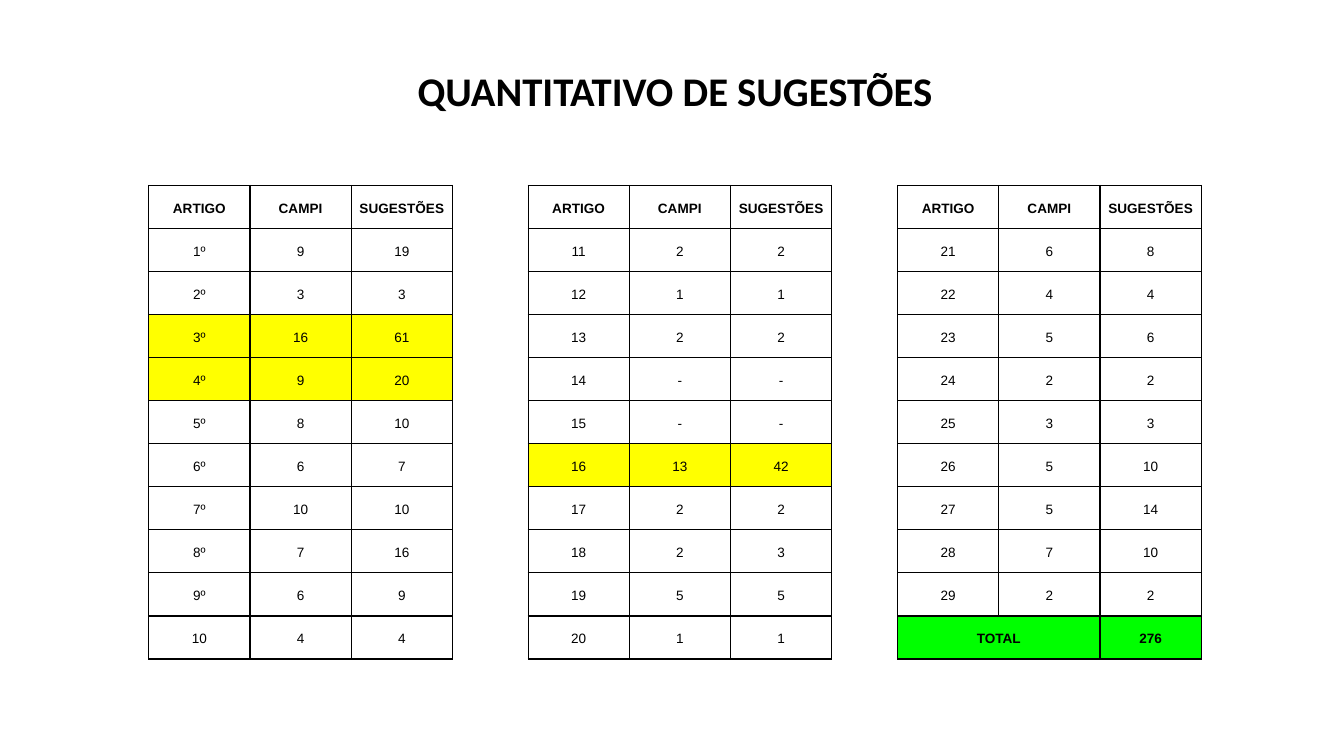
"""Builds the slide that counts suggestions per article in three tables."""
from lxml import etree
from pptx import Presentation
from pptx.dml.color import RGBColor
from pptx.enum import text
from pptx.oxml import ns
from pptx.util import Inches, Pt

TITLE = "QUANTITATIVO DE SUGESTÕES"
HEADER = ("ARTIGO", "CAMPI", "SUGESTÕES")
TABLES = [
    [("1º", "9", "19"), ("2º", "3", "3"), ("3º", "16", "61"), ("4º", "9", "20"),
     ("5º", "8", "10"), ("6º", "6", "7"), ("7º", "10", "10"), ("8º", "7", "16"),
     ("9º", "6", "9"), ("10", "4", "4")],
    [("11", "2", "2"), ("12", "1", "1"), ("13", "2", "2"), ("14", "-", "-"),
     ("15", "-", "-"), ("16", "13", "42"), ("17", "2", "2"), ("18", "2", "3"),
     ("19", "5", "5"), ("20", "1", "1")],
    [("21", "6", "8"), ("22", "4", "4"), ("23", "5", "6"), ("24", "2", "2"),
     ("25", "3", "3"), ("26", "5", "10"), ("27", "5", "14"), ("28", "7", "10"),
     ("29", "2", "2"), ("TOTAL", "", "276")],
]
HIGHLIGHTED = {"3º", "4º", "16"}

BLACK = RGBColor(0x00, 0x00, 0x00)
YELLOW = RGBColor(0xFF, 0xFF, 0x00)
GREEN = RGBColor(0x00, 0xFF, 0x00)

SLIDE_W, SLIDE_H = 11.02, 6.2
TABLE_LEFTS = (1.22, 4.33, 7.36)
TABLE_TOP = 1.52
COL_W, ROW_H = 0.83, 0.34
BORDER = Pt(0.75)


def add_text(tf, words, size, font, bold, spacing):
    p = tf.paragraphs[0]
    p.alignment = text.PP_ALIGN.CENTER
    p.line_spacing = spacing
    r = p.add_run()
    r.text = words
    r.font.size = Pt(size)
    r.font.name = font
    r.font.bold = bold
    r.font.color.rgb = BLACK


def add_borders(cell):
    tc_pr = cell._tc.get_or_add_tcPr()
    for i, side in enumerate(("lnL", "lnR", "lnT", "lnB")):
        ln = etree.Element(ns.qn(f"a:{side}"), w=str(BORDER))
        fill = etree.SubElement(ln, ns.qn("a:solidFill"))
        etree.SubElement(fill, ns.qn("a:srgbClr"), val=str(BLACK))
        tc_pr.insert(i, ln)


def style_cell(cell, words, bold, color):
    cell.margin_left = cell.margin_right = Inches(0.03)
    cell.margin_top = cell.margin_bottom = Inches(0.1)
    cell.vertical_anchor = text.MSO_ANCHOR.BOTTOM
    if color is None:
        cell.fill.background()
    else:
        cell.fill.solid()
        cell.fill.fore_color.rgb = color
    add_borders(cell)
    if words:
        add_text(cell.text_frame, words, 8, "Arial", bold, 1.15)


def add_count_table(s, left, body):
    rows = [HEADER] + body
    n_rows, n_cols = len(rows), len(HEADER)
    table = s.shapes.add_table(
        n_rows, n_cols, Inches(left), Inches(TABLE_TOP),
        Inches(n_cols * COL_W), Inches(n_rows * ROW_H)).table
    table.first_row = table.horz_banding = False
    for col in table.columns:
        col.width = Inches(COL_W)
    for i, row in enumerate(rows):
        table.rows[i].height = Inches(ROW_H)
        total = row[0] == "TOTAL"
        color = GREEN if total else YELLOW if row[0] in HIGHLIGHTED else None
        for j, words in enumerate(row):
            style_cell(table.cell(i, j), words, total or row is HEADER, color)
        if total:
            table.cell(i, 0).merge(table.cell(i, 1))


def main():
    prs = Presentation()
    prs.slide_width, prs.slide_height = Inches(SLIDE_W), Inches(SLIDE_H)
    s = prs.slides.add_slide(prs.slide_layouts[6])

    title = s.shapes.add_textbox(Inches(1.22), Inches(0.25), Inches(8.63), Inches(1.03))
    tf = title.text_frame
    tf.word_wrap = True
    tf.vertical_anchor = text.MSO_ANCHOR.MIDDLE
    tf.margin_left = tf.margin_right = tf.margin_top = tf.margin_bottom = 0
    add_text(tf, TITLE, 24, "Calibri", True, 0.93)

    for left, body in zip(TABLE_LEFTS, TABLES):
        add_count_table(s, left, body)
    prs.save("out.pptx")


if __name__ == "__main__":
    main()
